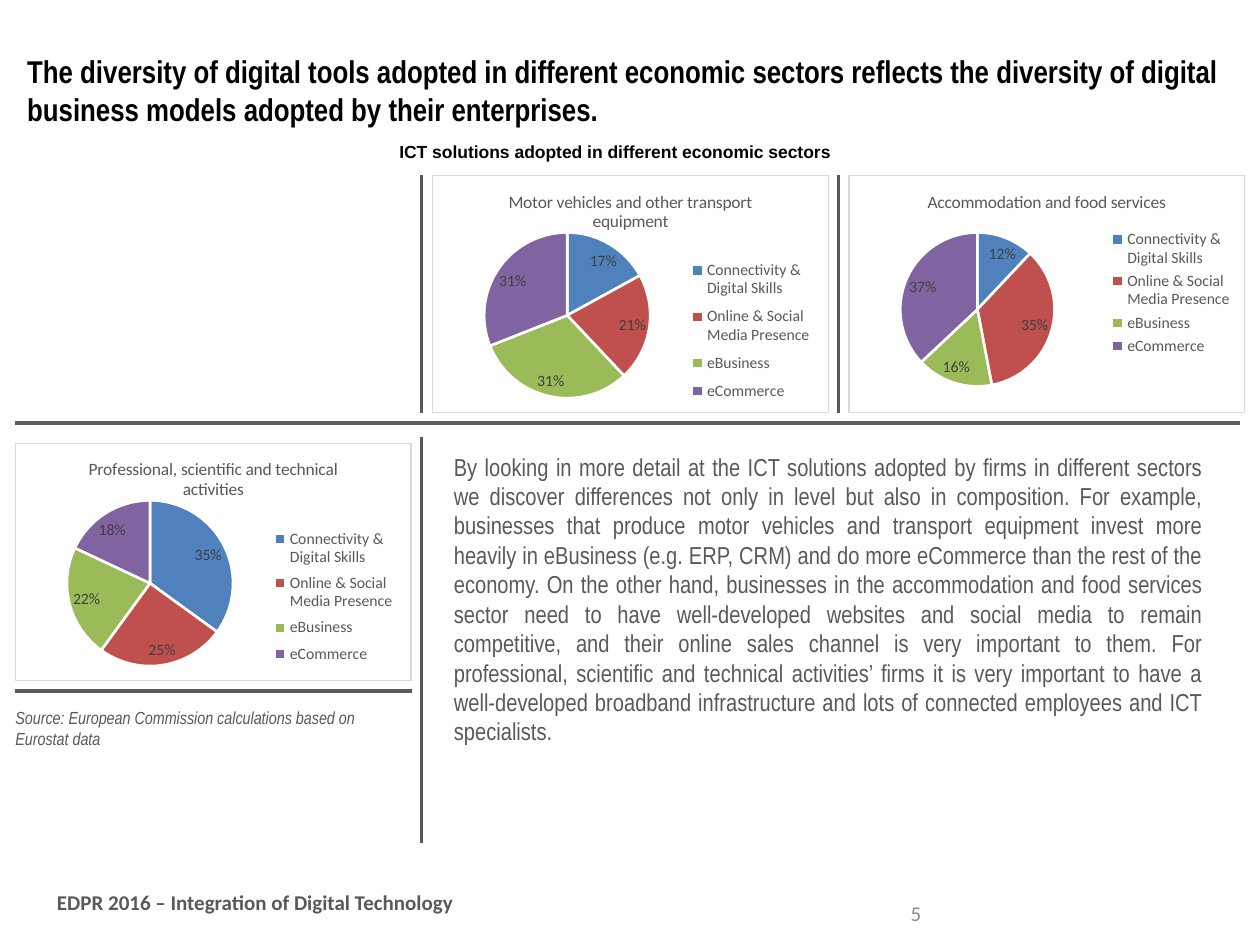
from typing import NamedTuple

from lxml.etree import SubElement
from pptx import Presentation
from pptx.chart.data import CategoryChartData
from pptx.dml.color import RGBColor
from pptx.enum.chart import XL_CHART_TYPE as Chart, XL_LABEL_POSITION as LabelPos, XL_LEGEND_POSITION as LegendPos
from pptx.enum.shapes import MSO_CONNECTOR as Connector
from pptx.enum.text import MSO_ANCHOR as Anchor, PP_ALIGN as Align
from pptx.oxml import parse_xml
from pptx.oxml.ns import nsdecls, qn
from pptx.util import Cm, Pt

GREY = "595959"
CATEGORIES = ["Connectivity & Digital Skills", "Online & Social Media Presence",
              "eBusiness", "eCommerce"]
SLICE_COLORS = ["4F81BD", "C0504D", "9BBB59", "8064A2"]
CHART_W, CHART_H = 8, 4.8
COLUMNS = (0.3, 8.71, 17.1)
ROWS = (3.53, 8.93)


class Rule(NamedTuple):
    x1: float
    y1: float
    x2: float
    y2: float


class Label(NamedTuple):
    text: str
    box: tuple[float, float, float, float]
    font: str
    size: int
    color: str = GREY
    bold: bool = False
    italic: bool = False
    align: Align = Align.LEFT
    anchor: Anchor = Anchor.TOP


class Sector(NamedTuple):
    title: str
    series: str
    col: int
    row: int
    values: list[int]
    plot: tuple[float, float, float, float]
    legend: tuple[float, float, float, float]


RULES = [
    Rule(8.5, 8.81, 8.5, 17),
    Rule(0.3, 8.53, 25, 8.53),
    Rule(16.9, 3.53, 16.9, 8.33),
    Rule(8.5, 3.53, 8.5, 8.33),
    Rule(0.3, 13.93, 8.3, 13.93),
]

LABELS = [
    Label("5", (17.3, 17.9, 1.52, 1.02), "Calibri", 12, "8C8C8C",
          align=Align.RIGHT, anchor=Anchor.MIDDLE),
    Label("The diversity of digital tools adopted in different economic sectors reflects "
          "the diversity of digital business models adopted by their enterprises.",
          (0.3, 0.3, 24.8, 3.02), "Arial Narrow", 18, "000000", bold=True, anchor=Anchor.MIDDLE),
    Label("By looking in more detail at the ICT solutions adopted by firms in different sectors "
          "we discover differences not only in level but also in composition. For example, "
          "businesses that produce motor vehicles and transport equipment invest more heavily in "
          "eBusiness (e.g. ERP, CRM) and do more eCommerce than the rest of the economy. On the "
          "other hand, businesses in the accommodation and food services sector need to have "
          "well-developed websites and social media to remain competitive, and their online sales "
          "channel is very important to them. For professional, scientific and technical "
          "activities’ firms it is very important to have a well-developed broadband "
          "infrastructure and lots of connected employees and ICT specialists.",
          (8.9, 8.98, 15.6, 6.25), "Arial Narrow", 14, align=Align.JUSTIFY),
    Label("EDPR 2016 – Integration of Digital Technology", (0.9, 17.53, 16.8, 1.3),
          "Calibri", 12, bold=True, anchor=Anchor.MIDDLE),
    Label("ICT solutions adopted in different economic sectors", (7.8, 2.72, 12.7, 0.68),
          "Arial", 10, "000000", bold=True),
    Label("Source: European Commission calculations based on Eurostat data",
          (0.06, 14.12, 8.43, 1.12), "Arial Narrow", 10, italic=True),
]

SECTORS = [
    Sector("Motor vehicles and other transport equipment", "Series 1", 1, 0,
           [17, 21, 31, 31], (0.134, 0.245, 0.418, 0.696), (0.643, 0.32, 0.33, 0.67)),
    Sector("Accommodation and food services", "Series 1", 2, 0,
           [12, 35, 16, 37], (0.134, 0.245, 0.387, 0.645), (0.65, 0.215, 0.33, 0.57)),
    Sector("Professional, scientific and technical activities",
           "Professional, scientific and technical activities", 0, 1,
           [35, 25, 22, 18], (0.134, 0.245, 0.418, 0.696), (0.643, 0.325, 0.33, 0.63)),
]


def rgb(color: str) -> RGBColor:
    return RGBColor.from_string(color)


def style_font(font, name: str, size: int, color: str, bold=False, italic=False) -> None:
    font.name, font.size, font.bold, font.italic = name, Pt(size), bold, italic
    font.color.rgb = rgb(color)


def draw_rule(s, rule: Rule) -> None:
    line = s.shapes.add_connector(Connector.STRAIGHT, *map(Cm, rule))
    line.line.color.rgb = rgb(GREY)
    line.line.width = Pt(2)
    SubElement(line._element.spPr, qn("a:effectLst"))


def draw_label(s, label: Label) -> None:
    tf = s.shapes.add_textbox(*map(Cm, label.box)).text_frame
    tf.word_wrap = True
    tf.vertical_anchor = label.anchor
    p = tf.paragraphs[0]
    p.alignment = label.align
    r = p.add_run()
    r.text = label.text
    style_font(r.font, label.font, label.size, label.color, label.bold, label.italic)


def set_layout(element, index: int, box: tuple[float, float, float, float], inner=False) -> None:
    """Place a chart part at fractions of the chart area."""
    for old in element.findall(qn("c:layout")):
        element.remove(old)
    target = '<c:layoutTarget val="inner"/>' if inner else ""
    modes = '<c:xMode val="edge"/><c:yMode val="edge"/>'
    sizes = "".join(f'<c:{key} val="{value:.2f}"/>' for key, value in zip("xywh", box))
    element.insert(index, parse_xml(
        f'<c:layout {nsdecls("c")}><c:manualLayout>{target}{modes}{sizes}</c:manualLayout></c:layout>'))


def draw_pie(s, sector: Sector) -> None:
    data = CategoryChartData()
    data.categories = CATEGORIES
    data.add_series(sector.series, sector.values)
    chart = s.shapes.add_chart(Chart.PIE, Cm(COLUMNS[sector.col]), Cm(ROWS[sector.row]),
                               Cm(CHART_W), Cm(CHART_H), data).chart
    style_font(chart.font, "Calibri", 10, "000000")

    # Title and legend
    chart.has_title = True
    r = chart.chart_title.text_frame.paragraphs[0].add_run()
    r.text = sector.title
    style_font(r.font, "Calibri", 10, GREY)
    chart.has_legend = True
    legend = chart.legend
    legend.position = LegendPos.RIGHT
    legend.include_in_layout = False
    style_font(legend.font, "Calibri", 9, GREY)
    set_layout(legend._element, 1, sector.legend)

    # Slices and percentages
    plot = chart.plots[0]
    plot.vary_by_categories = True
    for i, color in enumerate(SLICE_COLORS):
        fmt = plot.series[0].points[i].format
        fmt.fill.solid()
        fmt.fill.fore_color.rgb = rgb(color)
        fmt.line.color.rgb = rgb("FFFFFF")
        fmt.line.width = Pt(1.5)
    labels = plot.series[0].data_labels
    labels.show_percentage, labels.show_value = True, False
    labels.number_format, labels.number_format_is_linked = "0%", False
    labels.position = LabelPos.BEST_FIT
    style_font(labels.font, "Calibri", 9, "404040")

    # Plot position and chart frame
    space = chart._chartSpace
    set_layout(space.chart.plotArea, 0, sector.plot, inner=True)
    space.chart.addnext(parse_xml(
        f'<c:spPr {nsdecls("c", "a")}><a:solidFill><a:srgbClr val="FFFFFF"/></a:solidFill>'
        f'<a:ln w="{Pt(0.75)}"><a:solidFill><a:srgbClr val="D9D9D9"/></a:solidFill></a:ln></c:spPr>'))


def main() -> None:
    prs = Presentation()
    prs.slide_width, prs.slide_height = Cm(25.4), Cm(19.05)
    s = prs.slides.add_slide(prs.slide_layouts[6])
    for rule in RULES:
        draw_rule(s, rule)
    for sector in SECTORS:
        draw_pie(s, sector)
    for label in LABELS:
        draw_label(s, label)
    prs.save("out.pptx")


if __name__ == "__main__":
    main()
